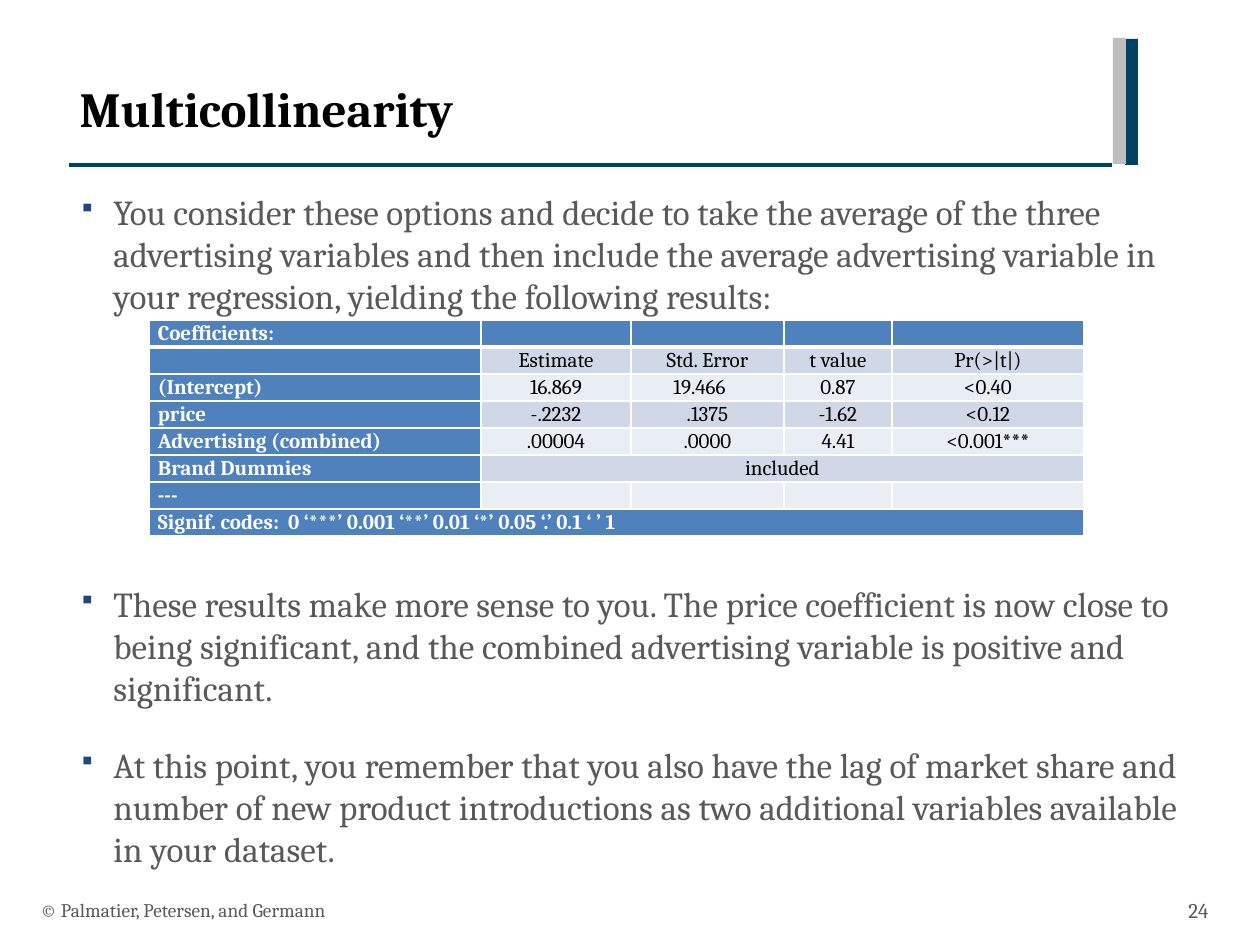
from lxml import etree
from pptx import Presentation
from pptx.dml.color import RGBColor
from pptx.enum.shapes import MSO_CONNECTOR, MSO_SHAPE
from pptx.enum.text import MSO_ANCHOR, PP_ALIGN
from pptx.oxml.ns import qn
from pptx.util import Emu, Pt

LEFT, CENTER, RIGHT = PP_ALIGN.LEFT, PP_ALIGN.CENTER, PP_ALIGN.RIGHT
TOP, MIDDLE = MSO_ANCHOR.TOP, MSO_ANCHOR.MIDDLE
RECTANGLE, STRAIGHT = MSO_SHAPE.RECTANGLE, MSO_CONNECTOR.STRAIGHT
EMU_PER_PX = 914400 / 126
FONT = "Cambria"
COLORS = {
    "navy": "004264", "gray": "BFBFBF", "title": "000000", "text": "595959",
    "bullet": "1F497D", "white": "FFFFFF", "header": "4F81BD",
    "band_dark": "D0D8E8", "band_light": "E9EDF4",
}
BULLETS = [
    ("You consider these options and decide to take the average of the three advertising "
     "variables and then include the average advertising variable in your regression, "
     "yielding the following results:", 0),
    ("These results make more sense to you. The price coefficient is now close to being "
     "significant, and the combined advertising variable is positive and significant.", 152),
    ("At this point, you remember that you also have the lag of market share and number of "
     "new product introductions as two additional variables available in your dataset.", 20),
]
COLUMN_WIDTHS = [332, 150, 153, 108, 192]
COEFFICIENTS = [
    ["Coefficients:", "", "", "", ""],
    ["", "Estimate", "Std. Error", "t value", "Pr(>|t|)"],
    ["(Intercept)", "16.869", "19.466", "0.87", "<0.40"],
    ["price", "-.2232", ".1375", "-1.62", "<0.12"],
    ["Advertising (combined)", ".00004", ".0000", "4.41", "<0.001***"],
    ["Brand Dummies", "included", "", "", ""],
    ["---", "", "", "", ""],
    ["Signif. codes:  0 ‘***’ 0.001 ‘**’ 0.01 ‘*’ 0.05 ‘.’ 0.1 ‘ ’ 1", "", "", "", ""],
]
BRAND_ROW, LAST_ROW = 5, 7


def px(length):
    return Emu(round(length * EMU_PER_PX))


def color(name):
    return RGBColor.from_string(COLORS[name])


def set_font(paragraph, size, color_name, bold=False):
    font = paragraph.font
    font.name, font.size, font.bold = FONT, Pt(size), bold
    font.color.rgb = color(color_name)


def add_text_box(slide, box, anchor):
    frame = slide.shapes.add_textbox(*map(px, box)).text_frame
    frame.word_wrap = True
    frame.vertical_anchor = anchor
    return frame


def add_bar(slide, box, color_name):
    shape = slide.shapes.add_shape(RECTANGLE, *map(px, box))
    shape.shadow.inherit = False
    shape.fill.solid()
    shape.fill.fore_color.rgb = color(color_name)
    shape.line.fill.background()


def add_header(slide, left, top, width, height):
    rule_y = top + height
    rule = slide.shapes.add_connector(
        STRAIGHT, px(left), px(rule_y), px(left + width - 26), px(rule_y))
    rule.line.color.rgb = color("navy")
    rule.line.width = Pt(2)
    etree.SubElement(rule._element.spPr, qn("a:effectLst"))
    add_bar(slide, (left + width - 13, top + 1, 13, 126), "navy")
    add_bar(slide, (left + width - 25, top, 13, 126), "gray")

    title = slide.shapes.title
    title.left, title.top = px(left - 2), px(top + 34)
    title.width, title.height = px(1041), px(111)
    frame = title.text_frame
    frame.text = "Multicollinearity"
    frame.vertical_anchor = TOP
    frame.paragraphs[0].alignment = LEFT
    set_font(frame.paragraphs[0], 28, "title", True)


def add_bullet(paragraph):
    properties = paragraph._p.get_or_add_pPr()
    indent = px(32)
    properties.set("marL", str(indent))
    properties.set("indent", str(-indent))
    bullet_color = etree.SubElement(properties, qn("a:buClr"))
    etree.SubElement(bullet_color, qn("a:srgbClr"), val=COLORS["bullet"])
    etree.SubElement(properties, qn("a:buSzPct"), val="75000")
    etree.SubElement(properties, qn("a:buFont"), typeface="Wingdings")
    etree.SubElement(properties, qn("a:buChar"), char="§")


def add_body(slide, *box):
    frame = add_text_box(slide, box, TOP)
    for index, (text, space_before) in enumerate(BULLETS):
        paragraph = frame.add_paragraph() if index else frame.paragraphs[0]
        paragraph.text = text
        add_bullet(paragraph)
        if space_before:
            paragraph.space_before = Pt(space_before)
        set_font(paragraph, 20, "text")


def set_borders(cell, bottom_width):
    properties = cell._tc.get_or_add_tcPr()
    widths = {"lnL": 1, "lnR": 1, "lnT": 1, "lnB": bottom_width}
    for position, (tag, width) in enumerate(widths.items()):
        line = etree.Element(qn(f"a:{tag}"), w=str(Pt(width)))
        fill = etree.SubElement(line, qn("a:solidFill"))
        etree.SubElement(fill, qn("a:srgbClr"), val=COLORS["white"])
        properties.insert(position, line)


def fill_cell(cell, text, row, column):
    is_header = row in (0, LAST_ROW) or column == 0
    band = "band_dark" if row % 2 else "band_light"
    cell.fill.solid()
    cell.fill.fore_color.rgb = color("header" if is_header else band)
    set_borders(cell, 1 if row else 3)
    cell.margin_left = cell.margin_right = px(9)
    cell.margin_top = cell.margin_bottom = 0
    paragraph = cell.text_frame.paragraphs[0]
    if text:
        paragraph.text = text
    else:
        etree.SubElement(paragraph._p, qn("a:endParaRPr"), sz="1200")
    paragraph.alignment = LEFT if is_header else CENTER
    paragraph.line_spacing = 1.07
    set_font(paragraph, 12, "white" if is_header else "title", is_header)


def add_coefficients(slide, left, top, row_height):
    rows, columns = len(COEFFICIENTS), len(COLUMN_WIDTHS)
    table = slide.shapes.add_table(
        rows, columns, px(left), px(top),
        px(sum(COLUMN_WIDTHS)), px(rows * row_height)).table
    for column, width in zip(table.columns, COLUMN_WIDTHS):
        column.width = px(width)
    for row, values in enumerate(COEFFICIENTS):
        table.rows[row].height = px(row_height)
        for column, text in enumerate(values):
            fill_cell(table.cell(row, column), text, row, column)
    table.cell(2, 2).margin_right = px(25)
    table.cell(BRAND_ROW, 1).merge(table.cell(BRAND_ROW, columns - 1))
    table.cell(LAST_ROW, 0).merge(table.cell(LAST_ROW, columns - 1))


def add_footer(slide, left, top, width, height):
    number_width = 77
    parts = [
        ("© Palmatier, Petersen, and Germann", left, 844, 11, LEFT),
        ("24", left + width - number_width, number_width, 12, RIGHT),
    ]
    for text, part_left, part_width, size, alignment in parts:
        frame = add_text_box(slide, (part_left, top, part_width, height), MIDDLE)
        frame.text = text
        frame.paragraphs[0].alignment = alignment
        set_font(frame.paragraphs[0], size, "text")


def main():
    presentation = Presentation()
    presentation.slide_width, presentation.slide_height = px(1260), px(945)
    slide = presentation.slides.add_slide(presentation.slide_layouts[5])
    add_header(slide, 69, 38, 1069, 127)
    add_body(slide, 69, 184, 1152, 682)
    add_footer(slide, 28, 885, 1193, 50)
    add_coefficients(slide, 149, 320, 26)
    presentation.save("out.pptx")


if __name__ == "__main__":
    main()
